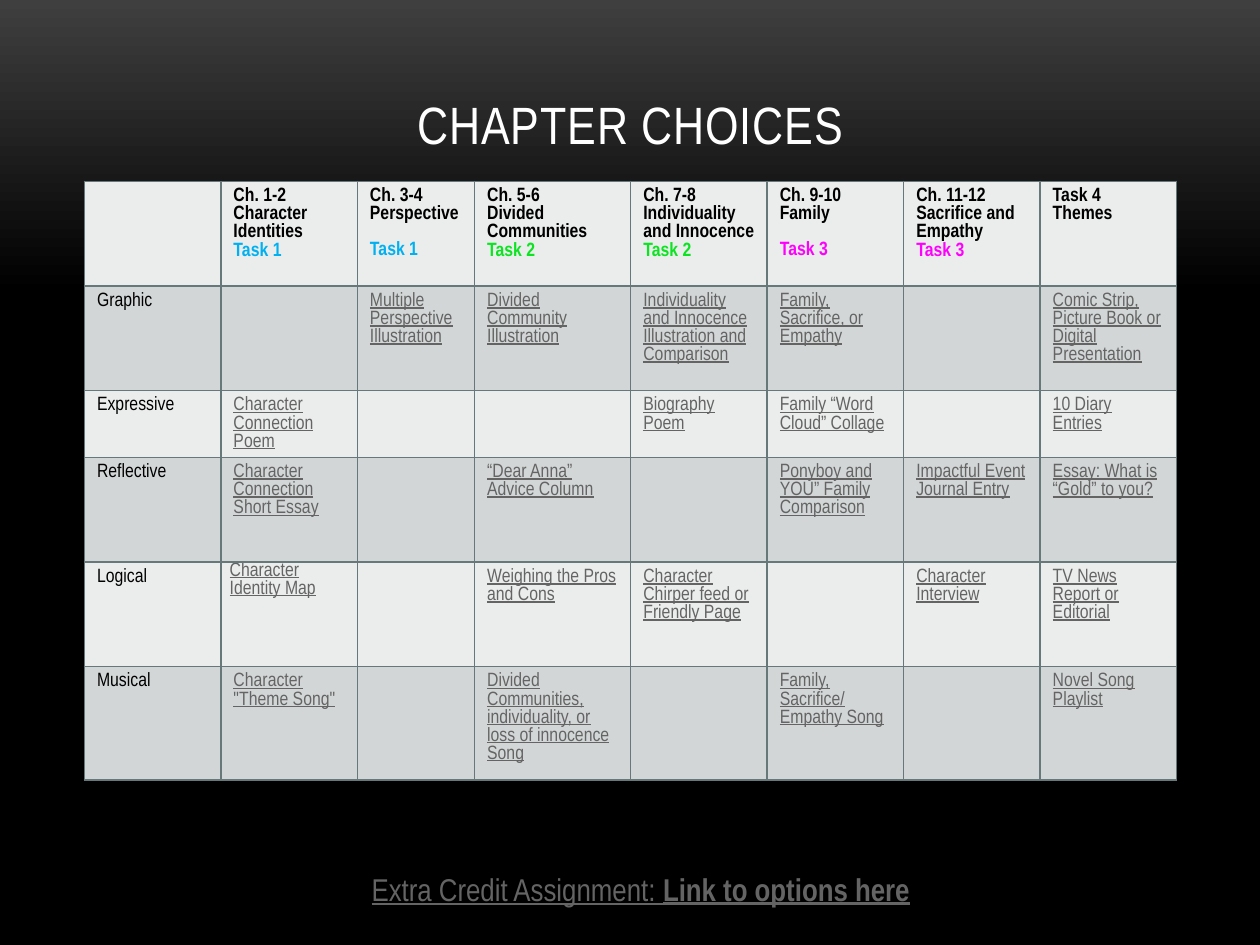
from lxml import etree
from pptx import Presentation
from pptx.dml.color import RGBColor
from pptx.enum.text import MSO_ANCHOR, PP_ALIGN
from pptx.oxml.ns import qn
from pptx.util import Inches, Pt

CENTER = PP_ALIGN.CENTER
BOTTOM = MSO_ANCHOR.BOTTOM
FONT = "Arial Narrow"

WHITE = RGBColor(0xFF, 0xFF, 0xFF)
BLACK = RGBColor(0x00, 0x00, 0x00)
DARK = RGBColor(0x3F, 0x3F, 0x3F)
GRAY = RGBColor(0x64, 0x64, 0x64)
EDGE = RGBColor(0x67, 0x78, 0x7B)
LIGHT = RGBColor(0xEB, 0xEC, 0xEC)
SHADE = RGBColor(0xD3, 0xD6, 0xD7)
BLUE = RGBColor(0x00, 0xB0, 0xF0)
GREEN = RGBColor(0x0C, 0xE4, 0x21)
PINK = RGBColor(0xFF, 0x00, 0xFF)

LINE = 10.3
HEADS = [
    ("Ch. 1-2", "Character Identities", "Task 1", BLUE, 0),
    ("Ch. 3-4", "Perspective", "Task 1", BLUE, LINE),
    ("Ch. 5-6", "Divided Communities", "Task 2", GREEN, 0),
    ("Ch. 7-8", "Individuality and Innocence", "Task 2", GREEN, 0),
    ("Ch. 9-10", "Family", "Task 3", PINK, LINE),
    ("Ch. 11-12", "Sacrifice and Empathy", "Task 3", PINK, 0),
]
LAST = "Task 4 Themes"
ROWS = [
    ("Graphic", "", "Multiple Perspective Illustration",
     "Divided Community Illustration",
     "Individuality and Innocence Illustration and Comparison",
     "Family, Sacrifice, or Empathy", "",
     "Comic Strip, Picture Book or Digital Presentation"),
    ("Expressive", "Character Connection\nPoem", "", "", "Biography Poem",
     "Family “Word Cloud” Collage", "", "10 Diary Entries"),
    ("Reflective", "Character Connection\nShort Essay", "",
     "“Dear Anna” Advice Column", "", "Ponyboy and YOU” Family Comparison",
     "Impactful Event Journal Entry", "Essay: What is “Gold” to you?"),
    ("Logical", "Character Identity Map", "", "Weighing the Pros and Cons",
     "Character Chirper feed or Friendly Page", "", "Character Interview",
     "TV News Report or\nEditorial"),
    ("Musical", "Character \"Theme Song\"", "",
     "Divided Communities, individuality, or loss of innocence Song", "",
     "Family, Sacrifice/ Empathy Song", "", "Novel Song Playlist"),
]
WIDE = {2: 0.93, 3: 1.24}
TALL = [0.83, 0.83, 0.3, 0.83, 0.83, 0.9]


def write(para, text, size=11, color=BLACK, bold=False, line=False):
    run = para.add_run()
    run.text = text
    font = run.font
    font.name, font.size = FONT, Pt(size)
    font.bold, font.underline = bold, line
    font.color.rgb = color
    return run


def paras(frame, count):
    return [frame.paragraphs[0]] + [frame.add_paragraph() for _ in range(count - 1)]


def border(cell):
    props = cell._tc.get_or_add_tcPr()
    for spot, side in enumerate(("lnL", "lnR", "lnT", "lnB")):
        edge = etree.Element(qn(f"a:{side}"), w=str(Pt(1)))
        fill = etree.SubElement(edge, qn("a:solidFill"))
        etree.SubElement(fill, qn("a:srgbClr"), val=str(EDGE))
        props.insert(spot, edge)


def paint_back(slide):
    fill = slide.background.fill
    fill.gradient()
    fill.gradient_angle = 270
    for stop, color, place in zip(fill.gradient_stops, (DARK, BLACK), (0, 0.31)):
        stop.color.rgb = color
        stop.position = place


def put_title(slide, left, top, width, height):
    title = slide.shapes.title
    title.left, title.top = Inches(left), Inches(top)
    title.width, title.height = Inches(width), Inches(height)
    frame = title.text_frame
    frame.vertical_anchor = BOTTOM
    para = frame.paragraphs[0]
    para.alignment = CENTER
    run = write(para, "CHAPTER CHOICES", size=30, color=WHITE)
    run.font._element.set("spc", "50")


def fill_head(grid):
    for col, (span, theme, task, color, gap) in enumerate(HEADS, 1):
        lines = paras(grid.cell(0, col).text_frame, 3)
        for para, text, tint in zip(lines, (span, theme, task), (BLACK, BLACK, color)):
            write(para, text, color=tint, bold=True)
        if gap:
            lines[-1].space_before = Pt(gap)
    write(grid.cell(0, len(HEADS) + 1).text_frame.paragraphs[0], LAST, bold=True)


def fill_body(grid):
    for row, texts in enumerate(ROWS, 1):
        for col, text in enumerate(texts):
            if not text:
                continue
            parts = text.split("\n")
            look = {"color": GRAY, "line": True} if col else {}
            for para, part in zip(paras(grid.cell(row, col).text_frame, len(parts)), parts):
                write(para, part, **look)


def put_table(slide, left, top, width, height):
    count = len(ROWS[0])
    grid = slide.shapes.add_table(
        len(TALL), count, Inches(left), Inches(top), Inches(width), Inches(height)).table
    even = (width - sum(WIDE.values())) / (count - len(WIDE))
    for num, col in enumerate(grid.columns):
        col.width = Inches(WIDE.get(num, even))
    for num, (row, tall) in enumerate(zip(grid.rows, TALL)):
        row.height = Inches(tall)
        for cell in row.cells:
            cell.fill.solid()
            cell.fill.fore_color.rgb = SHADE if num % 2 else LIGHT
            border(cell)
    fill_head(grid)
    fill_body(grid)
    tight = grid.cell(4, 1)
    tight.margin_left = tight.margin_right = Inches(0.07)
    tight.margin_top = tight.margin_bottom = 0


def put_extra(slide, left, top, width, height):
    box = slide.shapes.add_textbox(Inches(left), Inches(top), Inches(width), Inches(height))
    box.text_frame.word_wrap = True
    para = box.text_frame.paragraphs[0]
    para.alignment = CENTER
    look = {"size": 18, "color": GRAY, "line": True}
    write(para, "Extra Credit Assignment: ", **look)
    write(para, "Link to options here", bold=True, **look)


def main():
    deck = Presentation()
    deck.slide_width, deck.slide_height = Inches(10), Inches(7.5)
    slide = deck.slides.add_slide(deck.slide_layouts[5])
    paint_back(slide)
    put_title(slide, 0.67, 0.03, 8.67, 1.25)
    put_table(slide, 0.67, 1.44, 8.67, 4.75)
    put_extra(slide, 0.83, 6.86, 8.51, 0.4)
    deck.save("out.pptx")


if __name__ == "__main__":
    main()
